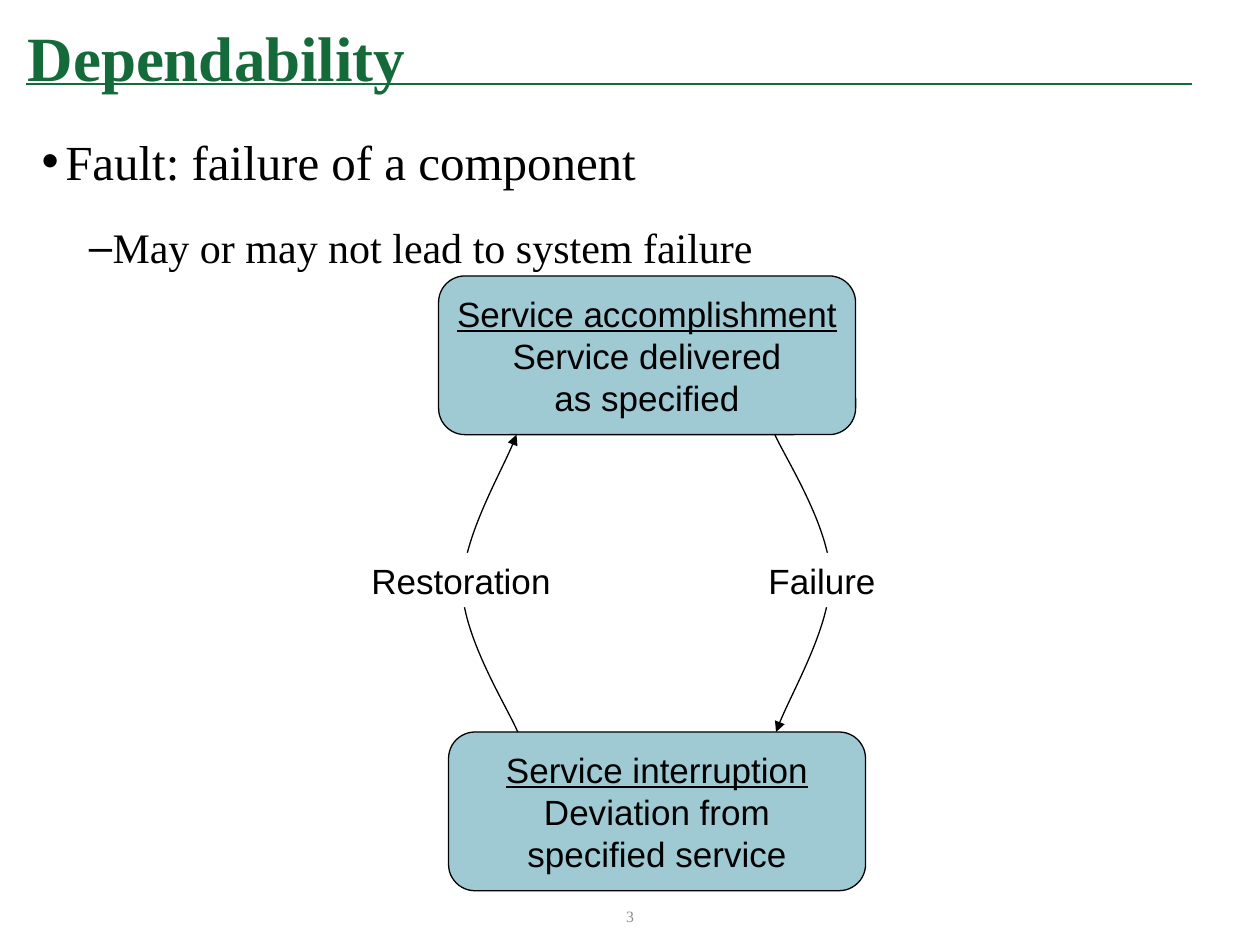
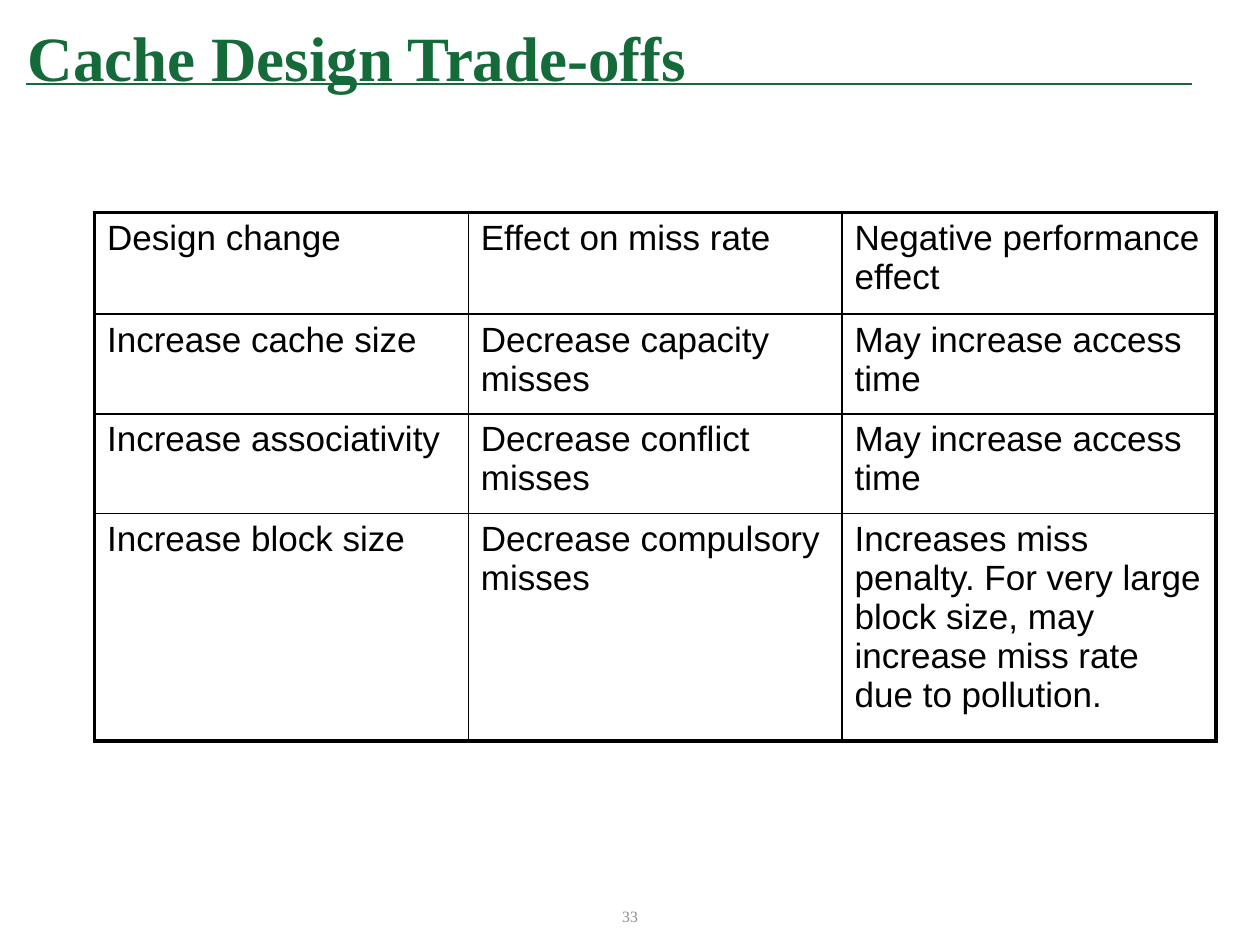
import lxml.etree
import pptx
import pptx.dml.color
import pptx.enum.shapes
import pptx.enum.text
import pptx.oxml.ns
import pptx.util

Pt = pptx.util.Pt
qn = pptx.oxml.ns.qn
sub = lxml.etree.SubElement
align = pptx.enum.text.PP_ALIGN
anchor = pptx.enum.text.MSO_ANCHOR
kind = pptx.enum.shapes.MSO_SHAPE

GREEN, BLUE, GREY = "146A39", "9FCAD3", "8C8C8C"
BLACK, WHITE = "000000", "FFFFFF"
SERIF, SANS = "Times New Roman", "Arial"


def paint(fill, tone):
    fill.solid()
    fill.fore_color.rgb = pptx.dml.color.RGBColor.from_string(tone)


def style(para, face, size, tone, side=align.LEFT):
    para.alignment = side
    for run in para.runs:
        run.font.name = face
        run.font.size = Pt(size)
        paint(run.font.fill, tone)


deck = pptx.Presentation()
deck.slide_width = Pt(720)
deck.slide_height = Pt(540)

pages = []
for layout, head, num in ((1, "Dependability", "3"), (5, "Cache Design Trade-offs", "33")):
    page = deck.slides.add_slide(deck.slide_layouts[layout])
    pages.append(page)

    rule = page.shapes.add_connector(
        pptx.enum.shapes.MSO_CONNECTOR.STRAIGHT, Pt(15), Pt(48.2), Pt(681), Pt(48.2))
    paint(rule.line.fill, GREEN)
    rule.line.width = Pt(1)
    sub(rule._element.spPr, qn("a:effectLst"))

    title = page.shapes.title
    title.left, title.top, title.width, title.height = Pt(8.6), Pt(5), Pt(662), Pt(52.6)
    frame = title.text_frame
    frame.text = head
    frame.auto_size = pptx.enum.text.MSO_AUTO_SIZE.NONE
    frame.vertical_anchor = anchor.BOTTOM
    style(frame.paragraphs[0], SERIF, 36, GREEN)
    frame.paragraphs[0].runs[0].font.bold = True

    foot = page.shapes.add_textbox(Pt(268.6), Pt(509), Pt(182.9), Pt(28.8)).text_frame
    foot.text = num
    foot.word_wrap = True
    foot.vertical_anchor = anchor.MIDDLE
    style(foot.paragraphs[0], SERIF, 9, GREY, align.CENTER)

page = pages[0]
body = page.placeholders[1]
body.left, body.top, body.width, body.height = Pt(16.6), Pt(51.8), Pt(688.3), Pt(452)
frame = body.text_frame
frame.auto_size = pptx.enum.text.MSO_AUTO_SIZE.NONE
frame.margin_top = Pt(6.5)
frame.text = "Fault: failure of a component\nMay or may not lead to system failure"
for level, (para, size, inset, gap) in enumerate(
        zip(frame.paragraphs, (28, 24), (13.5, 40.5), (0, 3.7))):
    para.level = level
    props = para._p.get_or_add_pPr()
    props.set("marL", str(Pt(inset)))
    props.set("indent", str(Pt(-13.5)))
    para.line_spacing = 1.5
    para.space_before = Pt(gap)
    style(para, SERIF, size, BLACK)

states = (
    (250.6, 157.7, "Service accomplishment\nService delivered\vas specified"),
    (256.3, 418.3, "Service interruption\nDeviation from\vspecified service"),
)
for left, top, words in states:
    box = page.shapes.add_shape(kind.ROUNDED_RECTANGLE, Pt(left), Pt(top), Pt(238.3), Pt(90.7))
    box.shadow.inherit = False
    paint(box.fill, BLUE)
    paint(box.line.fill, BLACK)
    box.line.width = Pt(0.75)
    frame = box.text_frame
    frame.text = words
    frame.word_wrap = False
    frame.vertical_anchor = anchor.MIDDLE
    for para in frame.paragraphs:
        style(para, SANS, 20, BLACK, align.CENTER)
    frame.paragraphs[0].runs[0].font.underline = True

moves = (
    ("Failure", 432, 75.6, align.LEFT,
     ((442.8, 248.4), (448.6, 261.4), (474.5, 301.7), (474.5, 329.8),
      (474.5, 357.8), (450, 399.6), (443.5, 418.3))),
    ("Restoration", 205.2, 116.6, align.RIGHT,
     ((295.9, 418.3), (290.2, 404.6), (265, 365), (264.2, 336.2),
      (264.2, 308.2), (288.7, 266.4), (295.2, 248.4))),
)
for word, left, width, side, spots in moves:
    spots = [(Pt(x), Pt(y)) for x, y in spots]
    pen = page.shapes.build_freeform(*spots[0], scale=1.0)
    pen.add_line_segments(spots[1:], close=False)
    curve = pen.convert_to_shape()
    steps = list(curve._element.iter(qn("a:lnTo")))
    for start in range(0, len(steps), 3):
        bend = sub(steps[0].getparent(), qn("a:cubicBezTo"))
        for step in steps[start:start + 3]:
            bend.append(step[0])
    for step in steps:
        step.getparent().remove(step)
    curve.shadow.inherit = False
    curve.fill.background()
    paint(curve.line.fill, BLACK)
    curve.line.width = Pt(0.75)
    sub(curve.line._get_or_add_ln(), qn("a:tailEnd"), type="triangle")

    tag = page.shapes.add_shape(kind.RECTANGLE, Pt(left), Pt(316), Pt(width), Pt(31))
    tag.shadow.inherit = False
    paint(tag.fill, WHITE)
    tag.line.fill.background()
    tag.text_frame.text = word
    tag.text_frame.word_wrap = False
    tag.text_frame.vertical_anchor = anchor.TOP
    style(tag.text_frame.paragraphs[0], SANS, 20, BLACK, side)

rows = (
    ("Design change", "Effect on miss rate", "Negative performance effect"),
    ("Increase cache size", "Decrease capacity misses", "May increase access time"),
    ("Increase associativity", "Decrease conflict misses", "May increase access time"),
    ("Increase block size", "Decrease compulsory misses",
     "Increases miss penalty. For very large block size, "
     "may increase miss rate due to pollution."),
)
tall = (58.1, 56.9, 56.9, 130)
across = (2.25, 1.5, 1, 1, 2.25)
down = (2.25, 1, 1, 2.25)
grid = pages[1].shapes.add_table(4, 3, Pt(54), Pt(121.5), Pt(640.8), Pt(sum(tall))).table
grid.first_row = False
grid.horz_banding = False
for col in grid.columns:
    col.width = Pt(213.6)
for r, words in enumerate(rows):
    grid.rows[r].height = Pt(tall[r])
    for c, word in enumerate(words):
        cell = grid.cell(r, c)
        cell.text = word
        style(cell.text_frame.paragraphs[0], SANS, 20, BLACK)
        props = cell._tc.get_or_add_tcPr()
        edges = (("L", down[c]), ("R", down[c + 1]), ("T", across[r]), ("B", across[r + 1]))
        for edge, width in edges:
            line = sub(props, qn("a:ln" + edge), w=str(Pt(width)))
            sub(sub(line, qn("a:solidFill")), qn("a:srgbClr"), val=BLACK)
        cell.fill.background()

deck.save("out.pptx")
